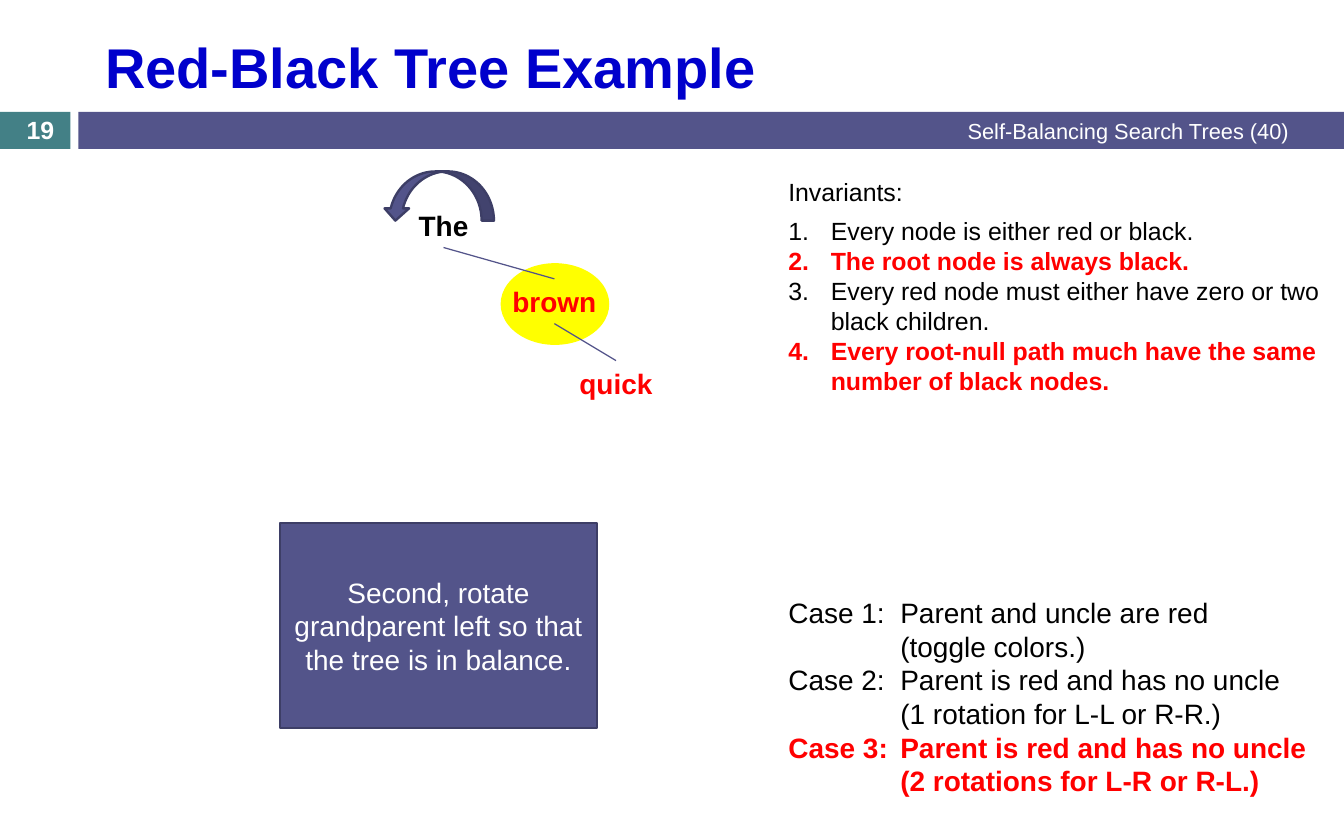
from pptx import Presentation
from pptx.dml.color import RGBColor
from pptx.enum.shapes import MSO_CONNECTOR, MSO_SHAPE
from pptx.enum.text import MSO_ANCHOR, MSO_AUTO_SIZE, PP_ALIGN
from pptx.oxml.ns import qn
from pptx.util import Inches, Pt
from lxml.etree import SubElement

COLORS = {"teal": "438086", "indigo": "53548A", "edge": "3D3E66", "yellow": "FFFF00",
          "white": "FFFFFF", "black": "000000", "red": "FF0000", "blue": "0000CC"}

prs = Presentation()
prs.slide_width, prs.slide_height = Inches(12), Inches(7.5)
s = prs.slides.add_slide(prs.slide_layouts[6])


def add_block(kind, box, fill=None, line=None):
    """Add a preset shape, or a text box when kind is None."""
    box = [Inches(v) for v in box]
    if kind is None:
        sp = s.shapes.add_textbox(*box)
    else:
        sp = s.shapes.add_shape(kind, *box)
        sp.shadow.inherit = False
        if line:
            sp.line.color.rgb = RGBColor.from_string(COLORS[line])
            sp.line.width = Pt(1.5)
        else:
            sp.line.fill.background()
    if fill:
        sp.fill.solid()
        sp.fill.fore_color.rgb = RGBColor.from_string(COLORS[fill])
    sp.text_frame.word_wrap = True
    return sp


def write(p, text, size, color, bold=False, align=PP_ALIGN.LEFT):
    p.alignment = align
    r = p.add_run()
    r.text = text
    r.font.color.rgb = RGBColor.from_string(COLORS[color])
    for name, value in {"name": "Arial", "size": Pt(size), "bold": bold}.items():
        setattr(r.font, name, value)


# Header bar and highlight behind the middle node
add_block(MSO_SHAPE.RECTANGLE, (0, 1, 0.63, 0.33), "teal")
add_block(MSO_SHAPE.RECTANGLE, (0.7, 1, 11.3, 0.33), "indigo")
add_block(MSO_SHAPE.OVAL, (4.47, 2.35, 0.97, 0.73), "yellow")

# Tree nodes and the edges between them
nodes = []
for text, left, top, color in [("The", 3.25, 1.81, "black"),
                               ("brown", 4.24, 2.49, "red"),
                               ("quick", 4.79, 3.22, "red")]:
    sp = add_block(None, (left, top, 1.42, 0.4))
    write(sp.text_frame.paragraphs[0], text, 18, color, True, PP_ALIGN.CENTER)
    nodes.append(sp)

for parent, child in zip(nodes, nodes[1:]):
    edge = s.shapes.add_connector(MSO_CONNECTOR.STRAIGHT, 0, 0, 0, 0)
    edge.begin_connect(parent, 2)
    edge.end_connect(child, 0)
    edge.line.color.rgb = RGBColor.from_string(COLORS["indigo"])
    edge.line.width = Pt(0.79)
    SubElement(edge._element.spPr, qn("a:effectLst"))

# Header texts
for text, box, size, color, bold, align in [
    ("Self-Balancing Search Trees (40)", (4.5, 0.99, 7.11, 0.35), 14, "white", False, PP_ALIGN.RIGHT),
    ("19", (0, 1.01, 0.72, 0.3), 16, "white", True, PP_ALIGN.CENTER),
    ("Red-Black Tree Example", (0.84, 0.19, 10.77, 0.8), 36, "blue", True, PP_ALIGN.LEFT),
]:
    tf = add_block(None, box).text_frame
    tf.vertical_anchor = MSO_ANCHOR.MIDDLE
    write(tf.paragraphs[0], text, size, color, bold, align)

# Step explanation and rotation arrow
tf = add_block(MSO_SHAPE.RECTANGLE, (2.5, 4.67, 2.83, 1.83), "indigo", "edge").text_frame
tf.vertical_anchor = MSO_ANCHOR.MIDDLE
write(tf.paragraphs[0], "Second, rotate grandparent left so that the tree is in balance.",
      18, "white", align=PP_ALIGN.CENTER)
arrow = add_block(MSO_SHAPE.CURVED_UP_ARROW, (3.42, 1.53, 0.99, 0.44), "indigo", "edge")
arrow.rotation = 180

# Invariants, with the ones at stake in red
tf = add_block(MSO_SHAPE.RECTANGLE, (6.94, 1.53, 4.95, 2.07), "white").text_frame
tf.vertical_anchor = MSO_ANCHOR.TOP
tf.auto_size = MSO_AUTO_SIZE.SHAPE_TO_FIT_TEXT
write(tf.paragraphs[0], "Invariants:", 16, "black")
for i, (text, active) in enumerate([
    ("Every node is either red or black.", False),
    ("The root node is always black.", True),
    ("Every red node must either have zero or two black children.", False),
    ("Every root-null path much have the same number of black nodes.", True),
]):
    p = tf.add_paragraph()
    p.level = 1
    if i == 0:
        p.space_before = Pt(6)
    pPr = p._p.get_or_add_pPr()
    pPr.set("marL", str(Inches(0.38)))
    pPr.set("indent", str(-Inches(0.38)))
    SubElement(pPr, qn("a:buFont"), typeface="+mj-lt")
    SubElement(pPr, qn("a:buAutoNum"), type="arabicPeriod")
    write(p, text, 16, "red" if active else "black", active)

# Insertion cases, with the current one in red
tf = add_block(MSO_SHAPE.RECTANGLE, (6.94, 5.27, 4.95, 1.92), "white").text_frame
tf.vertical_anchor = MSO_ANCHOR.TOP
tf.auto_size = MSO_AUTO_SIZE.SHAPE_TO_FIT_TEXT
case_lines = [
    ("Case 1:\tParent and uncle are red", False),
    ("\t(toggle colors.)", False),
    ("Case 2:\tParent is red and has no uncle", False),
    ("\t(1 rotation for L-L or R-R.)", False),
    ("Case 3:\tParent is red and has no uncle", True),
    ("\t(2 rotations for L-R or R-L.)", True),
]
for i, (text, active) in enumerate(case_lines):
    p = tf.add_paragraph() if i else tf.paragraphs[0]
    pPr = p._p.get_or_add_pPr()
    pPr.set("marL", str(Inches(1)))
    pPr.set("indent", str(-Inches(1)))
    write(p, text, 18, "red" if active else "black", active)

prs.save("out.pptx")
